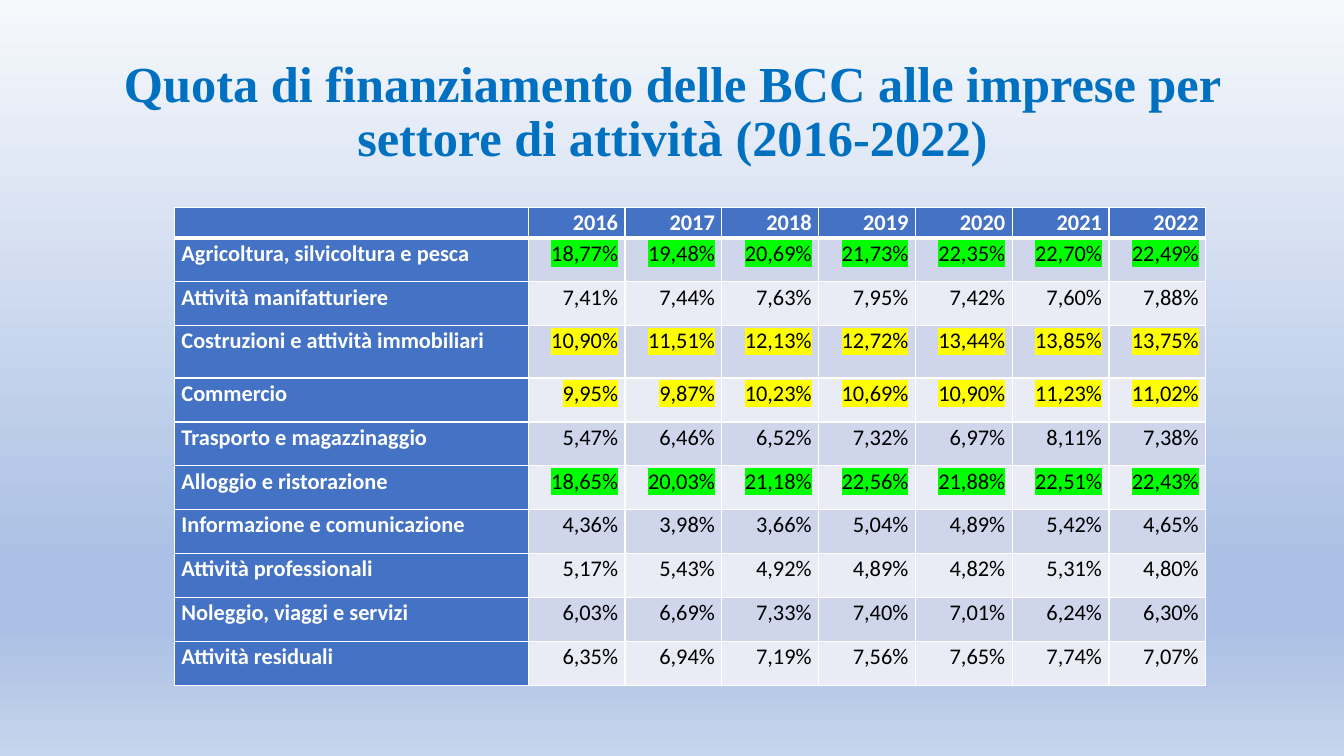
from lxml.etree import SubElement
from pptx import Presentation
from pptx.dml.color import RGBColor
from pptx.enum.text import MSO_ANCHOR as Anchor, PP_ALIGN as Align
from pptx.oxml.ns import qn
from pptx.util import Inches, Pt

TITLE = "Quota di finanziamento delle BCC alle imprese per settore di attività (2016-2022)"
YEARS = range(2016, 2023)
GREEN, YELLOW = "00FF00", "FFFF00"
SECTORS = [  # sector, shares by year, highlight
    ("Agricoltura, silvicoltura e pesca", "18,77 19,48 20,69 21,73 22,35 22,70 22,49", GREEN),
    ("Attività manifatturiere", "7,41 7,44 7,63 7,95 7,42 7,60 7,88", None),
    ("Costruzioni e attività immobiliari", "10,90 11,51 12,13 12,72 13,44 13,85 13,75", YELLOW),
    ("Commercio", "9,95 9,87 10,23 10,69 10,90 11,23 11,02", YELLOW),
    ("Trasporto e magazzinaggio", "5,47 6,46 6,52 7,32 6,97 8,11 7,38", None),
    ("Alloggio e ristorazione", "18,65 20,03 21,18 22,56 21,88 22,51 22,43", GREEN),
    ("Informazione e comunicazione", "4,36 3,98 3,66 5,04 4,89 5,42 4,65", None),
    ("Attività professionali", "5,17 5,43 4,92 4,89 4,82 5,31 4,80", None),
    ("Noleggio, viaggi e servizi", "6,03 6,69 7,33 7,40 7,01 6,24 6,30", None),
    ("Attività residuali", "6,35 6,94 7,19 7,56 7,65 7,74 7,07", None),
]
TABLE_HEIGHT, HEADER_HEIGHT, TALL_HEIGHT = 4.74, 0.3, 0.52
TALL_ROW = 3
SECTOR_WIDTH, YEAR_WIDTH = 3.51, 0.96


def rgb(hex_color):
    return RGBColor.from_string(hex_color)


def write(frame, text, *, size=16, font="Calibri", color="000000", bold=False,
          align=Align.RIGHT, spacing=1.07, after=8, highlight=None):
    paragraph = frame.paragraphs[0]
    paragraph.alignment = align
    paragraph.line_spacing = spacing
    paragraph.space_after = Pt(after)
    run = paragraph.add_run()
    run.text = text
    run.font.size, run.font.name, run.font.bold = Pt(size), font, bold
    run.font.color.rgb = rgb(color)
    if highlight:
        properties = run._r.get_or_add_rPr()
        mark = SubElement(properties, qn("a:highlight"))
        SubElement(mark, qn("a:srgbClr"), val=highlight)
        properties.find(qn("a:solidFill")).addnext(mark)


class ShareSlide:
    header_fill = "4472C4"
    bands = ("CFD5EA", "E9EBF5")
    border = "FFFFFF"

    def __init__(self, presentation):
        self.slide = presentation.slides.add_slide(presentation.slide_layouts[5])

    def background(self, stops):
        """Fill the slide from top to bottom with (percent, colour) stops."""
        fill = self.slide.background.fill
        fill.gradient()
        fill.gradient_angle = 270
        stop_list = self.slide.element.find(".//" + qn("a:gsLst"))
        for old_stop in list(stop_list):
            stop_list.remove(old_stop)
        for percent, color in stops:
            stop = SubElement(stop_list, qn("a:gs"), pos=str(percent * 1000))
            SubElement(stop, qn("a:srgbClr"), val=color)

    def title(self, text, left, top, width, height):
        heading = self.slide.shapes.title
        heading.left, heading.top = Inches(left), Inches(top)
        heading.width, heading.height = Inches(width), Inches(height)
        heading.text_frame.word_wrap = True
        heading.text_frame.vertical_anchor = Anchor.MIDDLE
        write(heading.text_frame, text, size=36, font="Times New Roman", color="0070C0",
              bold=True, align=Align.CENTER, spacing=0.9, after=0)

    def table(self, left, top, widths, heights):
        grid = self.slide.shapes.add_table(
            len(heights), len(widths), Inches(left), Inches(top),
            Inches(sum(widths)), Inches(sum(heights))).table
        for column, width in zip(grid.columns, widths):
            column.width = Inches(width)
        for row, height in zip(grid.rows, heights):
            row.height = Inches(height)
        return grid

    def cell(self, cell, text, fill, bottom=1, **text_format):
        cell.margin_left = cell.margin_right = Inches(0.07)
        cell.margin_top = cell.margin_bottom = 0
        write(cell.text_frame, text, **text_format)
        properties = cell._tc.get_or_add_tcPr()
        for side, points in (("L", 1), ("R", 1), ("T", 1), ("B", bottom)):
            line = SubElement(properties, qn(f"a:ln{side}"), w=str(Pt(points)))
            color = SubElement(SubElement(line, qn("a:solidFill")), qn("a:srgbClr"))
            color.set("val", self.border)
        cell.fill.solid()
        cell.fill.fore_color.rgb = rgb(fill)

    def header_cell(self, cell, text, **text_format):
        self.cell(cell, text, self.header_fill, color="FFFFFF", bold=True, **text_format)


def main():
    presentation = Presentation()
    presentation.slide_width, presentation.slide_height = Inches(13.33), Inches(7.5)
    page = ShareSlide(presentation)
    page.background([(0, "F6F8FC"), (74, "ABC0E4"), (83, "ABC0E4"), (100, "C7D5ED")])
    page.title(TITLE, 0.92, 0.4, 11.5, 1.45)

    row_height = (TABLE_HEIGHT - HEADER_HEIGHT - TALL_HEIGHT) / (len(SECTORS) - 1)
    heights = [HEADER_HEIGHT] + [row_height] * len(SECTORS)
    heights[TALL_ROW] = TALL_HEIGHT
    shares = page.table(1.73, 2.06, [SECTOR_WIDTH] + [YEAR_WIDTH] * len(YEARS), heights)

    for column, year in enumerate(["", *YEARS]):
        page.header_cell(shares.cell(0, column), str(year), bottom=3)
    for row, (sector, values, highlight) in enumerate(SECTORS, start=1):
        page.header_cell(shares.cell(row, 0), sector, align=Align.JUSTIFY)
        band = page.bands[(row - 1) % 2]
        for column, value in enumerate(values.split(), start=1):
            page.cell(shares.cell(row, column), f"{value}%", band, highlight=highlight)

    presentation.save("out.pptx")


if __name__ == "__main__":
    main()
